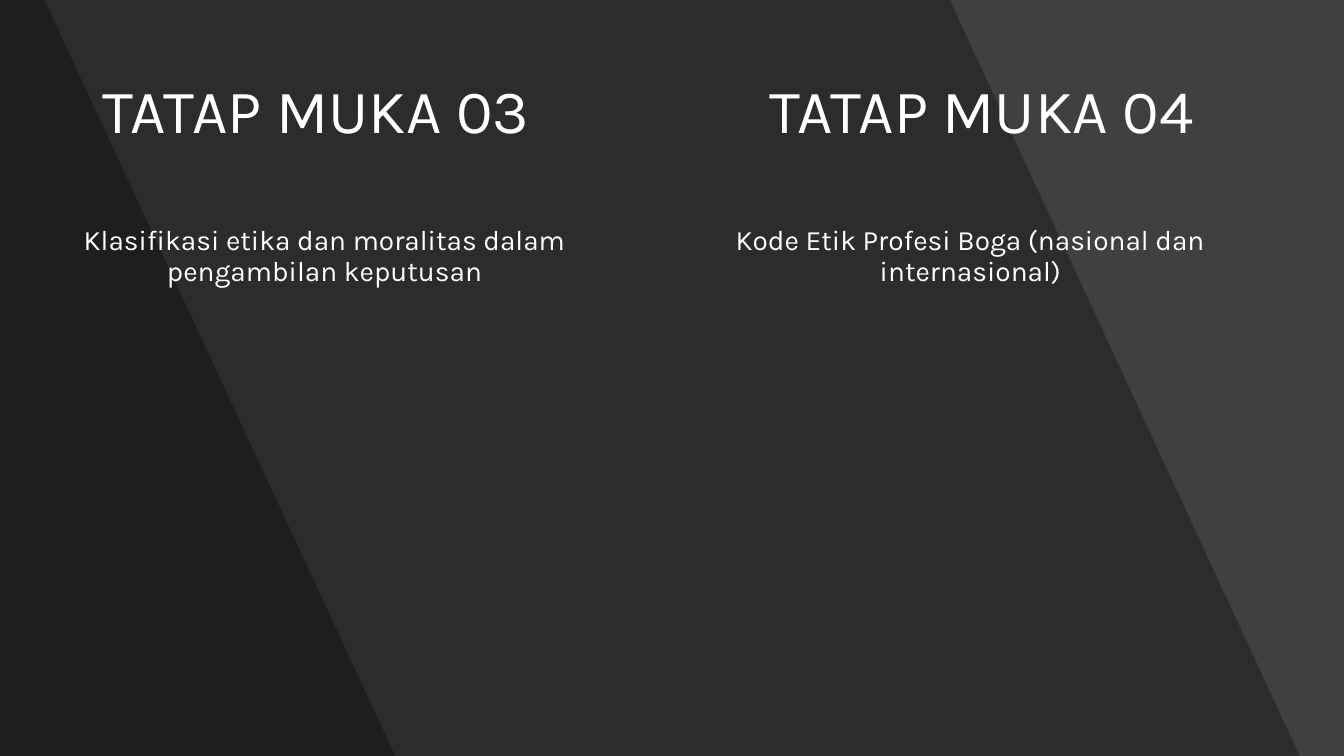
from lxml.etree import SubElement
from pptx import Presentation
from pptx.dml.color import RGBColor
from pptx.enum.text import MSO_ANCHOR, PP_ALIGN
from pptx.oxml.ns import qn
from pptx.util import Inches, Pt

COLORS = {"back": "404040", "shade": "000000", "text": "FFFFFF"}
WIDTH, HEIGHT = 13.33, 7.5


class Deck:
    """Hold the style and the current slide, and draw its elements."""

    font = "Karla"

    def __init__(self, slide):
        self.slide = slide

    def color(self, name):
        return RGBColor.from_string(COLORS[name])

    def back(self):
        fill = self.slide.background.fill
        fill.solid()
        fill.fore_color.rgb = self.color("back")

    def shade(self, top, base, alpha=30):
        pen = self.slide.shapes.build_freeform(0, 0, scale=Inches(1) / 100)
        tall = HEIGHT * 100
        pen.add_line_segments([(top * 100, 0), (base * 100, tall), (0, tall)])
        shape = pen.convert_to_shape()
        shape.shadow.inherit = False
        shape.line.fill.background()
        shape.fill.solid()
        shape.fill.fore_color.rgb = self.color("shade")
        tint = shape.fill._xPr.find(qn("a:solidFill"))[0]
        SubElement(tint, qn("a:alpha"), val=str(alpha * 1000))

    def text(self, words, left, top, width, height, size, align, anchor, gap=0):
        box = self.slide.shapes.add_textbox(
            Inches(left), Inches(top), Inches(width), Inches(height))
        frame = box.text_frame
        frame.word_wrap = True
        frame.vertical_anchor = anchor
        frame.text = words
        para = frame.paragraphs[0]
        para.alignment = align
        para.line_spacing = 0.9
        para.space_before = Pt(gap)
        font = para.runs[0].font
        font.name = self.font
        font.size = Pt(size)
        font.color.rgb = self.color("text")

    def title(self, words, left):
        self.text(words, left, 0.4, 4.55, 1.45, 44,
                  PP_ALIGN.LEFT, MSO_ANCHOR.MIDDLE)

    def body(self, words, left, width):
        self.text(words, left, 2.2, width, 0.89, 20,
                  PP_ALIGN.CENTER, MSO_ANCHOR.TOP, gap=10)


def main():
    show = Presentation()
    show.slide_width, show.slide_height = Inches(WIDTH), Inches(HEIGHT)
    deck = Deck(show.slides.add_slide(show.slide_layouts[6]))
    deck.back()
    deck.shade(9.42, 12.89)
    deck.shade(0.44, 3.92)
    deck.title("TATAP MUKA 03", 0.92)
    deck.body("Klasifikasi etika dan moralitas dalam pengambilan keputusan",
              0.71, 5.02)
    deck.title("TATAP MUKA 04", 7.53)
    deck.body("Kode Etik Profesi Boga (nasional dan internasional)", 6.84, 5.57)
    show.save("out.pptx")


if __name__ == "__main__":
    main()
